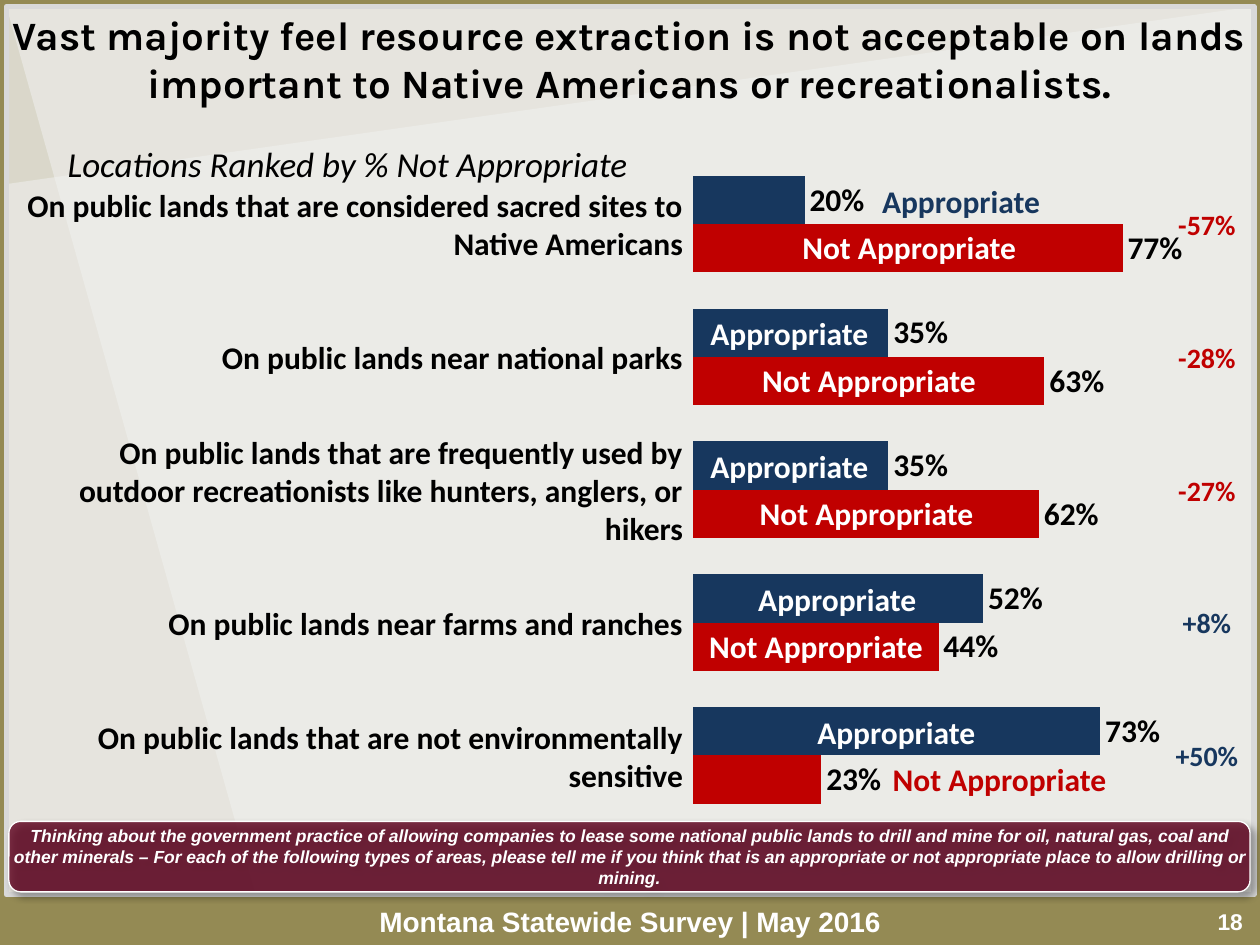
from lxml import etree
from pptx import Presentation
from pptx import util as u
from pptx.chart.data import CategoryChartData
from pptx.dml.color import RGBColor
from pptx.enum import chart as charts, shapes, text
from pptx.oxml import parse_xml
from pptx.oxml.ns import nsdecls, qn

NAVY, RED, WHITE, BLACK = "17375E", "C00000", "FFFFFF", "000000"
CENTER, RIGHT = text.PP_ALIGN.CENTER, text.PP_ALIGN.RIGHT
TOP, MIDDLE, BOTTOM = (text.MSO_ANCHOR.TOP, text.MSO_ANCHOR.MIDDLE,
                       text.MSO_ANCHOR.BOTTOM)
ROW_PITCH = 2.68

# location, (appropriate, not appropriate), left and width of each bar's label
ROWS = [
    ("On public lands that are considered sacred sites to Native Americans",
     (0.20, 0.77), (17.15, 4.45), (14.0, 8.66)),
    ("On public lands near national parks",
     (0.35, 0.63), (13.69, 4.45), (13.94, 7.16)),
    ("On public lands that are frequently used by outdoor recreationists "
     "like hunters, anglers, or hikers",
     (0.35, 0.62), (13.69, 4.45), (13.89, 7.16)),
    ("On public lands near farms and ranches",
     (0.52, 0.44), (13.92, 5.92), (14.0, 4.9)),
    ("On public lands that are not environmentally sensitive",
     (0.73, 0.23), (13.74, 8.66), (17.7, 4.9)),
]


def color(value):
    return RGBColor.from_string(value)


class SurveySlide:
    def __init__(self, deck, background):
        self.page = deck.slides.add_slide(deck.slide_layouts[6])
        fill = self.page.background.fill
        fill.solid()
        fill.fore_color.rgb = color(background)

    def set_text(self, box, words, size, ink, font="Calibri", bold=True, italic=False,
                 align=CENTER, anchor=TOP, insets=(0.25, 0.13)):
        """Fill a shape with one styled paragraph; insets are (sides, top and bottom)."""
        frame = box.text_frame
        frame.word_wrap = True
        frame.vertical_anchor = anchor
        frame.margin_left = frame.margin_right = u.Cm(insets[0])
        frame.margin_top = frame.margin_bottom = u.Cm(insets[1])
        para = frame.paragraphs[0]
        para.text = words
        para.alignment = align
        style = para.runs[0].font
        style.name, style.size = font, u.Pt(size)
        style.bold, style.italic = bold, italic
        style.color.rgb = color(ink)

    def label(self, at, words, size, ink, parent=None, **style):
        box = (parent or self.page).shapes.add_textbox(*map(u.Cm, at))
        self.set_text(box, words, size, ink, **style)

    def panel(self, kind, at, fill, opacity, line=None, width=0, rotation=0):
        box = self.page.shapes.add_shape(kind, *map(u.Cm, at))
        box.shadow.inherit = False
        box.rotation = rotation
        box.fill.solid()
        box.fill.fore_color.rgb = color(fill)
        tint = box._element.spPr.find(qn("a:solidFill"))[0]
        etree.SubElement(tint, qn("a:alpha"), val=str(opacity * 1000))
        if line:
            box.line.color.rgb = color(line)
            box.line.width = u.Pt(width)
        else:
            box.line.fill.background()
        return box

    def drop_shadow(self, box):
        effects = box._element.spPr.find(qn("a:effectLst"))
        effects.append(parse_xml(
            f'<a:outerShdw {nsdecls("a")} blurRad="50800" dist="38100" dir="2700000" '
            'algn="tl" rotWithShape="0"><a:srgbClr val="000000">'
            '<a:alpha val="40000"/></a:srgbClr></a:outerShdw>'))

    def bars(self, at, categories, series):
        """Clustered bars that fill their frame; series is (name, values, colour)."""
        data = CategoryChartData(number_format="0%")
        data.categories = categories
        for name, values, _ in series:
            data.add_series(name, values)
        chart = self.page.shapes.add_chart(
            charts.XL_CHART_TYPE.BAR_CLUSTERED, *map(u.Cm, at), data).chart
        chart.has_legend = chart.has_title = False
        chart.font.name, chart.font.size, chart.font.bold = "Calibri", u.Pt(18), True
        chart.font.color.rgb = color(BLACK)
        chart.category_axis.reverse_order = True
        chart.category_axis.visible = False
        scale = chart.value_axis
        scale.minimum_scale, scale.maximum_scale = 0, 1
        scale.has_major_gridlines = scale.visible = False
        plot = chart.plots[0]
        plot.gap_width, plot.overlap = 75, 0
        plot.vary_by_categories = False
        for bar, (_, _, fill) in zip(plot.series, series):
            bar.format.fill.solid()
            bar.format.fill.fore_color.rgb = color(fill)
            bar.invert_if_negative = False
            bar.data_labels.show_value = True
            bar.data_labels.position = charts.XL_LABEL_POSITION.OUTSIDE_END
        area = chart._chartSpace.chart.plotArea
        for old in area.findall(qn("c:layout")):
            area.remove(old)
        area.insert(0, parse_xml(
            f'<c:layout {nsdecls("c")}><c:manualLayout><c:layoutTarget val="inner"/>'
            '<c:xMode val="edge"/><c:yMode val="edge"/><c:x val="0"/><c:y val="0"/>'
            '<c:w val="1"/><c:h val="1"/></c:manualLayout></c:layout>'))


def main():
    deck = Presentation()
    deck.slide_width, deck.slide_height = u.Cm(25.4), u.Cm(19.05)
    slide = SurveySlide(deck, "948A54")

    kinds = shapes.MSO_SHAPE
    frame = (0.13, 0.13, 25.15, 17.91)
    slide.panel(kinds.FLOWCHART_MANUAL_INPUT, frame, "F2F2F2", 50)
    slide.panel(kinds.FLOWCHART_MANUAL_INPUT, (3.75, -3.49, 17.91, 25.15),
                "F2F2F2", 50, rotation=270)
    slide.panel(kinds.RECTANGLE, frame, "F2F2F2", 75, "D9D9D9", 3)
    slide.label((3.18, 18.11, 19.05, 0.94), "Montana Statewide Survey | May 2016",
                16, WHITE, font="Arial", anchor=BOTTOM)
    slide.label((24.1, 18.16, 1.4, 0.81), "18", 13, WHITE, font="Arial", anchor=MIDDLE)

    appropriate, not_appropriate = zip(*(row[1] for row in ROWS))
    slide.bars((13.97, 3.18, 11.25, 13.39), [str(n + 1) for n in range(len(ROWS))],
               [("Series 1", appropriate, NAVY), ("Series 2", not_appropriate, RED)])

    slide.label((0.13, 0.2, 25.15, 1.96),
                "Vast majority feel resource extraction is not acceptable on lands "
                "important to Native Americans or recreationalists.",
                23, BLACK, font="Karla", insets=(0, 0))
    question = slide.panel(kinds.ROUNDED_RECTANGLE, (0.18, 16.56, 25.02, 1.42),
                           "5E001D", 80, WHITE, 0.75)
    slide.drop_shadow(question)
    slide.set_text(question,
                   "Thinking about the government practice of allowing companies to "
                   "lease some national public lands to drill and mine for oil, natural "
                   "gas, coal and other minerals – For each of the following types of "
                   "areas, please tell me if you think that is an appropriate or not "
                   "appropriate place to allow drilling or mining.",
                   10, WHITE, font="Arial", italic=True, anchor=BOTTOM, insets=(0, 0))
    slide.label((0.38, 2.74, 13.26, 1.12), "Locations Ranked by % Not Appropriate",
                20, BLACK, bold=False, italic=True)

    margins = slide.page.shapes.add_group_shape()
    for index, (location, (yes, no), yes_span, no_span) in enumerate(ROWS):
        shift = index * ROW_PITCH
        slide.label((0.28, 3.98 + shift, 13.49, 1.07), location, 18, BLACK,
                    align=RIGHT, anchor=MIDDLE, insets=(0, 0.13))
        slide.label((23.62, 3.98 + shift, 1.42, 1.07), f"{yes - no:+.0%}", 16,
                    NAVY if yes > no else RED, parent=margins,
                    anchor=MIDDLE, insets=(0, 0.13))
        # A bar too short for its label has the label beside it, in the bar's colour
        for words, share, (left, width), top, fill in (
                ("Appropriate", yes, yes_span, 3.53, NAVY),
                ("Not Appropriate", no, no_span, 4.47, RED)):
            slide.label((left, top + shift, width, 1.02), words, 18,
                        WHITE if share > 0.3 else fill)

    deck.save("out.pptx")


if __name__ == "__main__":
    main()
